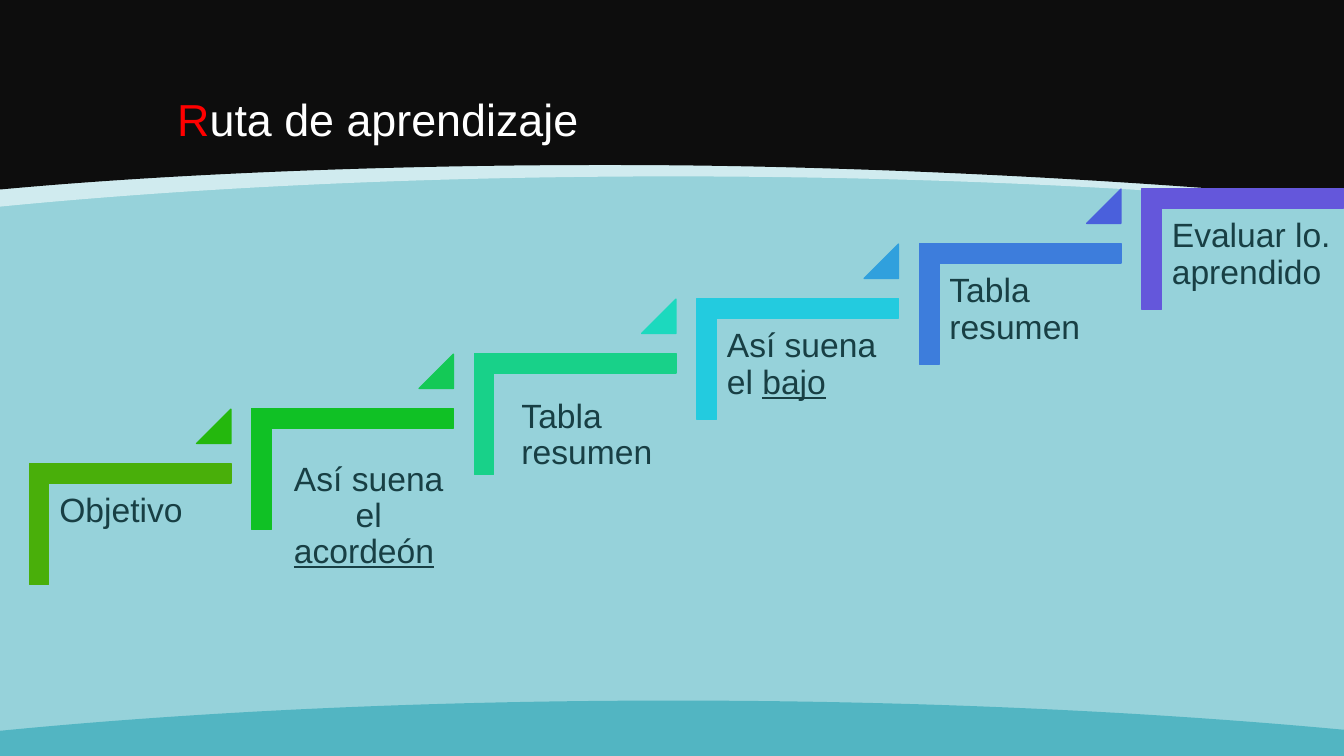
from lxml.etree import SubElement
from pptx import Presentation
from pptx.dml.color import RGBColor
from pptx.enum.shapes import MSO_SHAPE as Preset
from pptx.enum.text import MSO_ANCHOR as Anchor, PP_ALIGN as Align
from pptx.oxml.ns import qn
from pptx.util import Inches, Pt

WIDTH, HEIGHT = 13.33, 7.5
FONT = "Arial"
COLORS = {
    "background": "96D2DA", "band": "0D0D0D", "edge": "EAF6F8", "footer": "52B5C2",
    "initial": "FF0000", "title": "FFFFFF", "label": "183F44",
}
STEP_COLORS = {
    "corner": ["49AF0A", "10C125", "18D189", "23CBDF", "3D7DDC", "6457DB"],
    "triangle": ["24B80D", "14C956", "1CD9BE", "30A0DD", "4A60DC"],
}
STEPS = [
    ([("Objetivo", False)], (0.2, 0.2), Align.LEFT),
    ([("Así suena el ", False), ("acordeón", True), (" ", False)], (0.26, 0.43), Align.CENTER),
    ([("Tabla resumen", False)], (0.37, 0.35), Align.LEFT),
    ([("Así suena el ", False), ("bajo", True)], (0.2, 0.2), Align.LEFT),
    ([("Tabla resumen", False)], (0.2, 0.2), Align.LEFT),
    ([("Evaluar lo. aprendido", False)], (0.2, 0.2), Align.LEFT),
]
STEP_WIDTH, STEP_HEIGHT = 2, 1.2
STEP_RIGHT, STEP_RISE = 2.207, 0.546


def rgb(value):
    return RGBColor.from_string(value)


def paint(shape, color, line_width=None):
    shape.shadow.inherit = False
    shape.fill.solid()
    shape.fill.fore_color.rgb = rgb(color)
    if line_width is None:
        shape.line.fill.background()
    else:
        shape.line.color.rgb = rgb(color)
        shape.line.width = Pt(line_width)


def bend(shape, first):
    outline = next(shape.element.iter(qn("a:path")))
    lines = outline.findall(qn("a:lnTo"))[first:first + 6]
    for group in (lines[:3], lines[3:]):
        group[0].tag
        bezier = SubElement(outline, qn("a:cubicBezTo"))
        outline.replace(group[0], bezier)
        for line in group:
            bezier.append(line[0])
        for line in group[1:]:
            outline.remove(line)


def add_wave(slide, points, first_curve, color, opacity=None):
    corners = [(Inches(x), Inches(y)) for x, y in points]
    builder = slide.shapes.build_freeform(*corners[0])
    builder.add_line_segments(corners[1:], close=True)
    shape = builder.convert_to_shape()
    bend(shape, first_curve)
    paint(shape, color)
    if opacity is not None:
        fill_color = shape.fill._xPr.find(qn("a:solidFill"))[0]
        SubElement(fill_color, qn("a:alpha")).set("val", str(opacity * 1000))


def add_text(slide, box, runs, size, anchor=Anchor.TOP, align=Align.LEFT, inset=(0.1, 0.1)):
    frame = slide.shapes.add_textbox(*map(Inches, box)).text_frame
    frame.word_wrap = True
    frame.vertical_anchor = anchor
    frame.margin_left = frame.margin_right = Inches(inset[0])
    frame.margin_top = frame.margin_bottom = Inches(inset[1])
    paragraph = frame.paragraphs[0]
    paragraph.alignment = align
    paragraph.line_spacing = 0.9
    for text, color, underline in runs:
        run = paragraph.add_run()
        run.text = text
        run.font.name = FONT
        run.font.size = Pt(size)
        run.font.color.rgb = rgb(color)
        run.font.underline = underline


def add_backdrop(slide, width, height):
    slide.background.fill.solid()
    slide.background.fill.fore_color.rgb = rgb(COLORS["background"])
    top = [(0, 0), (width, 0)]
    edge = [(width, 2.04), (11.4, 1.86), (9.12, 1.75), (6.68, 1.75),
            (4.23, 1.75), (1.94, 1.86), (0, 2.05)]
    band = [(width, 1.98), (11.4, 1.8), (8.89, 1.66), (6.68, 1.64),
            (4.45, 1.62), (1.94, 1.7), (0, 1.88)]
    footer = [(0, 7.25), (1.94, 7.06), (4.23, 6.95), (6.68, 6.95),
              (9.12, 6.95), (11.4, 7.06), (width, 7.24)]
    add_wave(slide, top + edge, 2, COLORS["edge"], opacity=70)
    add_wave(slide, top + band, 2, COLORS["band"])
    add_wave(slide, footer + [(width, height), (0, height)], 0, COLORS["footer"])


def add_title(slide, box):
    runs = [("R", COLORS["initial"], False), ("uta de aprendizaje", COLORS["title"], False)]
    add_text(slide, box, runs, 32, anchor=Anchor.BOTTOM, inset=(0.1, 0.05))


def add_step(slide, left, top, color, label):
    runs, (text_right, text_down), align = label
    turn = (STEP_WIDTH - STEP_HEIGHT) / 2
    corner = slide.shapes.add_shape(
        Preset.CORNER, Inches(left + turn), Inches(top - turn),
        Inches(STEP_HEIGHT), Inches(STEP_WIDTH))
    corner.rotation = 90
    corner.adjustments[0] = corner.adjustments[1] = 0.161
    paint(corner, color, 1)
    colored = [(text, COLORS["label"], underline) for text, underline in runs]
    add_text(slide, (left + text_right, top + text_down, 1.8, 1.58), colored, 24, align=align)


def add_triangle(slide, left, top, color):
    triangle = slide.shapes.add_shape(
        Preset.ISOSCELES_TRIANGLE, Inches(left), Inches(top), Inches(0.34), Inches(0.34))
    triangle.adjustments[0] = 1
    paint(triangle, color, 1)


def add_staircase(slide, left, top):
    for index, (color, label) in enumerate(zip(STEP_COLORS["corner"], STEPS)):
        add_step(slide, left + index * STEP_RIGHT, top - index * STEP_RISE, color, label)
    for index, color in enumerate(STEP_COLORS["triangle"]):
        add_triangle(slide, left + 1.66 + index * STEP_RIGHT,
                     top - 0.54 - index * STEP_RISE, color)


def main():
    presentation = Presentation()
    presentation.slide_width = Inches(WIDTH)
    presentation.slide_height = Inches(HEIGHT)
    slide = presentation.slides.add_slide(presentation.slide_layouts[6])
    add_backdrop(slide, WIDTH, HEIGHT)
    add_title(slide, (1.66, 0.3, 10, 1.2))
    add_staircase(slide, 0.29, 4.6)
    presentation.save("out.pptx")


if __name__ == "__main__":
    main()
